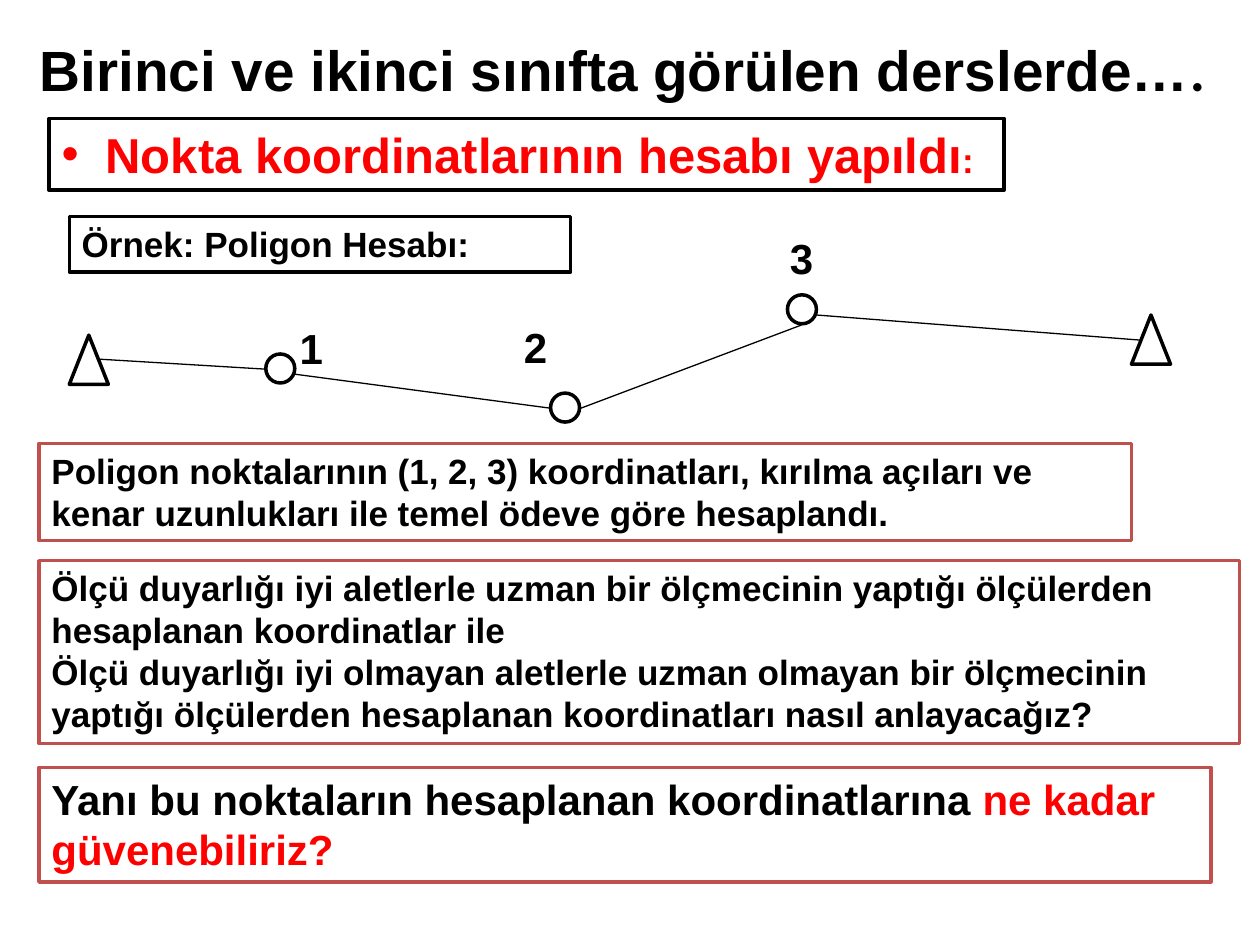
from lxml.etree import SubElement
from pptx import Presentation
from pptx.dml.color import RGBColor
from pptx.enum.shapes import MSO_CONNECTOR, MSO_SHAPE
from pptx.enum.text import MSO_ANCHOR, PP_ALIGN
from pptx.oxml.ns import qn
from pptx.util import Inches, Pt

COLORS = {"black": "000000", "white": "FFFFFF", "red": "FF0000", "brick": "C0504D"}

TITLE = [("Birinci ve ikinci sınıfta görülen derslerde…", 32.4, "black", "Arial"),
         (".", 32.4, "black", "Calibri")]
HEADING = [[("Nokta koordinatlarının hesabı yapıldı", 28, "red"), (":", 20, "red")]]
EXAMPLE = [[("Örnek: Poligon Hesabı:", 20, "black")]]
METHOD = [[("Poligon noktalarının (1, 2, 3) koordinatları, kırılma açıları ve "
            "kenar uzunlukları ile temel ödeve göre hesaplandı.", 20, "black")]]
COMPARISON = [
    [("Ölçü duyarlığı iyi aletlerle uzman bir ölçmecinin yaptığı ölçülerden "
      "hesaplanan koordinatlar ile", 20, "black")],
    [("Ölçü duyarlığı iyi olmayan aletlerle uzman olmayan bir ölçmecinin "
      "yaptığı ölçülerden hesaplanan koordinatları nasıl anlayacağız?", 20, "black")],
]
QUESTION = [[("Yanı bu noktaların hesaplanan koordinatlarına ", 24, "black"),
             ("ne kadar güvenebiliriz?", 24, "red")]]

BOXES = [
    (EXAMPLE, (0.55, 1.72, 3.98, 0.44), "black"),
    (HEADING, (0.39, 0.94, 7.58, 0.57), "black"),
    (METHOD, (0.31, 3.52, 8.67, 0.77), "brick"),
    (COMPARISON, (0.31, 4.45, 9.53, 1.45), "brick"),
    (QUESTION, (0.31, 6.09, 9.3, 0.91), "brick"),
]

SIDES = [((0.78, 2.85), (2.11, 2.93)), ((2.34, 2.97), (4.37, 3.24)),
         ((4.61, 3.24), (6.36, 2.58)), ((6.48, 2.5), (9.06, 2.7))]
STATIONS = [(2.11, 2.81), (4.37, 3.12), (6.25, 2.34)]
FIXED_POINTS = [(0.55, 2.66), (8.98, 2.5)]
LABELS = [("1", 2.28, 2.51), ("2", 4.06, 2.5), ("3", 6.17, 1.8)]
STATION_SIZE, FIXED_SIZE, LABEL_SIZE = (0.23, 0.23), (0.31, 0.39), (0.78, 0.5)


def rgb(name):
    return RGBColor.from_string(COLORS[name])


def add_runs(p, runs):
    for text, size, color, *font in runs:
        r = p.add_run()
        r.text = text
        r.font.name = font[0] if font else "Arial"
        r.font.size, r.font.bold = Pt(size), True
        r.font.color.rgb = rgb(color)


def write(s, paragraphs):
    tf = s.text_frame
    tf.word_wrap, tf.vertical_anchor = True, MSO_ANCHOR.TOP
    for i, runs in enumerate(paragraphs):
        p = tf.add_paragraph() if i else tf.paragraphs[0]
        p.alignment = PP_ALIGN.LEFT
        add_runs(p, runs)


def add_outlined(shapes, kind, box, color="black"):
    s = shapes.add_shape(kind, *map(Inches, box))
    s.shadow.inherit = False
    s.fill.solid()
    s.fill.fore_color.rgb = rgb("white")
    s.line.color.rgb, s.line.width = rgb(color), Pt(2)
    return s


def add_side(shapes, start, end):
    line = shapes.add_connector(MSO_CONNECTOR.STRAIGHT, *map(Inches, start + end))
    line.line.color.rgb, line.line.width = rgb("black"), Pt(0.75)
    SubElement(line._element.spPr, qn("a:effectLst"))


def add_bullet(p, indent):
    pPr = p._p.get_or_add_pPr()
    pPr.set("marL", str(Inches(indent)))
    pPr.set("indent", str(-Inches(indent)))
    SubElement(pPr, qn("a:buFont")).set("typeface", "Arial")
    SubElement(pPr, qn("a:buChar")).set("char", "•")


def add_traverse(shapes):
    for start, end in SIDES:
        add_side(shapes, start, end)
    for at in STATIONS:
        add_outlined(shapes, MSO_SHAPE.FLOWCHART_CONNECTOR, at + STATION_SIZE)
    for at in FIXED_POINTS:
        add_outlined(shapes, MSO_SHAPE.ISOSCELES_TRIANGLE, at + FIXED_SIZE)
    for text, *at in LABELS:
        s = shapes.add_textbox(*map(Inches, (*at, *LABEL_SIZE)))
        write(s, [[(text, 24, "black")]])


def main():
    """Build the slide on computing traverse point coordinates."""
    prs = Presentation()
    prs.slide_width, prs.slide_height = Inches(10), Inches(7.5)
    shapes = prs.slides.add_slide(prs.slide_layouts[5]).shapes

    title = shapes.title
    title.left, title.top, title.width, title.height = map(Inches, (0.19, -0.08, 9.5, 1.25))
    tf = title.text_frame
    tf.vertical_anchor = MSO_ANCHOR.MIDDLE
    tf.margin_left = tf.margin_right = Inches(0.05)
    tf.paragraphs[0].alignment = PP_ALIGN.CENTER
    add_runs(tf.paragraphs[0], TITLE)

    for paragraphs, box, color in BOXES:
        s = add_outlined(shapes, MSO_SHAPE.RECTANGLE, box, color)
        write(s, paragraphs)
        if paragraphs is HEADING:
            add_bullet(s.text_frame.paragraphs[0], 0.35)
    add_traverse(shapes.add_group_shape().shapes)
    prs.save("out.pptx")


if __name__ == "__main__":
    main()
